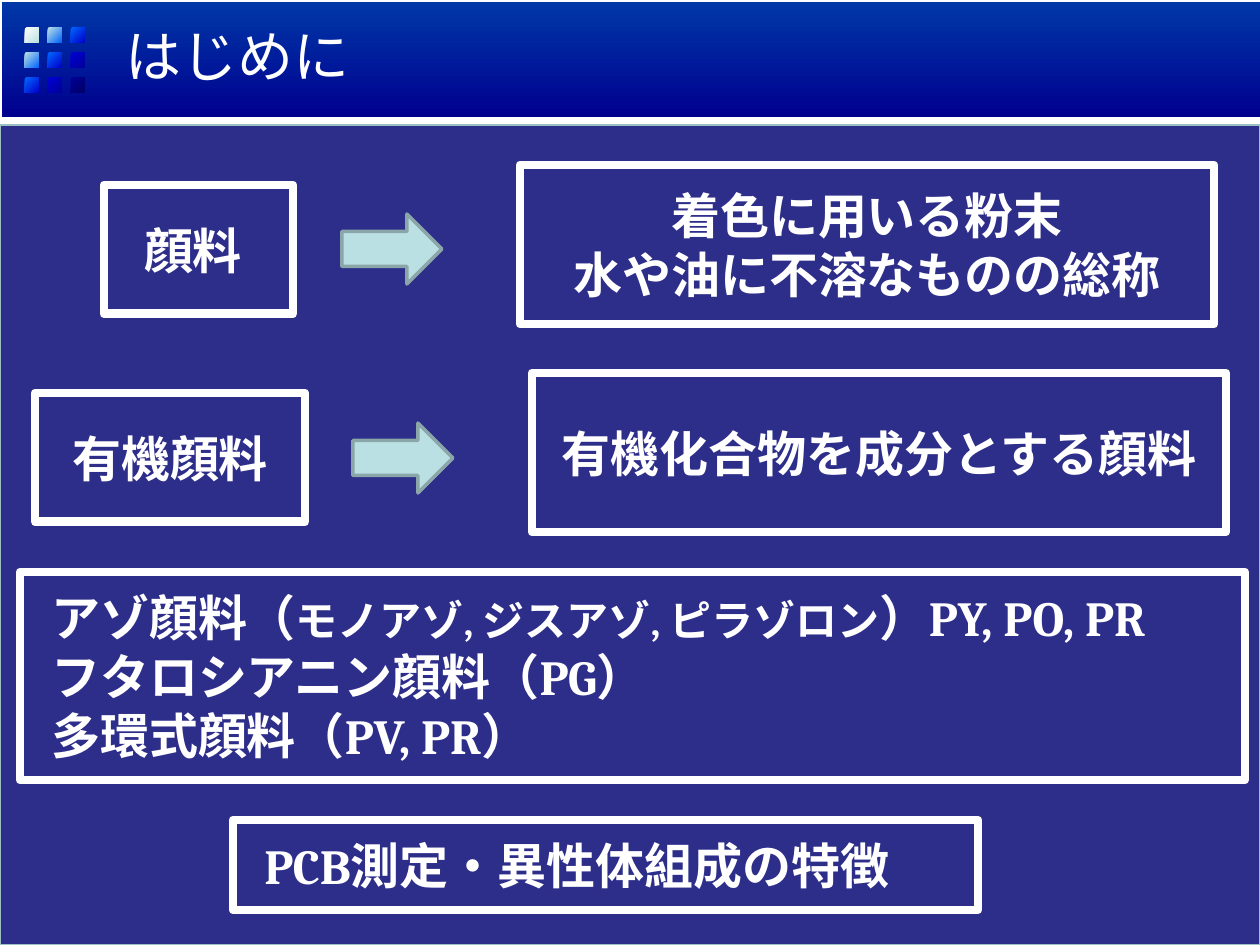
from dataclasses import dataclass
from itertools import pairwise, product

from pptx import Presentation
from pptx.dml.color import RGBColor
from pptx.enum.shapes import MSO_SHAPE as Preset
from pptx.enum.text import MSO_ANCHOR as Anchor, MSO_AUTO_SIZE as AutoSize, PP_ALIGN as Align
from pptx.shapes.autoshape import Shape
from pptx.slide import Slide
from pptx.util import Emu, Inches, Pt

EMU_PER_PX = 914400 / 126

WHITE = RGBColor(0xFF, 0xFF, 0xFF)
PALE_TEAL = RGBColor(0xBB, 0xE0, 0xE3)
PANEL_LINE = RGBColor(0x9B, 0xBF, 0xC2)
ARROW_LINE = RGBColor(0x8A, 0xA6, 0xA8)
PANEL_BLUE = RGBColor(0x2D, 0x2D, 0x8A)
HEADER_TOP = RGBColor(0x00, 0x38, 0xA8)
HEADER_BOTTOM = RGBColor(0x00, 0x00, 0x8E)
BRIGHT_BLUE = RGBColor(0x00, 0x66, 0xFF)
MEDIUM_BLUE = RGBColor(0x00, 0x00, 0xCC)
ROYAL_BLUE = RGBColor(0x00, 0x00, 0xD6)
DARK_BLUE = RGBColor(0x00, 0x00, 0x99)
NAVY = RGBColor(0x00, 0x00, 0x66)

# Gradient of each diagonal of the dot grid, from top left to bottom right
DIAGONAL_GRADIENTS = [
    (WHITE, PALE_TEAL),
    (PALE_TEAL, BRIGHT_BLUE),
    (BRIGHT_BLUE, MEDIUM_BLUE),
    (ROYAL_BLUE, DARK_BLUE),
    (DARK_BLUE, NAVY),
]


@dataclass(frozen=True)
class Area:
    left: int
    top: int
    width: int
    height: int


@dataclass(frozen=True)
class Run:
    text: str
    size: int = 28


@dataclass(frozen=True)
class TextBox:
    area: Area
    lines: list[list[Run]]
    is_list: bool = False


BOXES = [
    TextBox(Area(104, 185, 189, 129), [[Run("顔料 ")]]),
    TextBox(Area(520, 165, 694, 159), [[Run("着色に用いる粉末")], [Run("水や油に不溶なものの総称")]]),
    TextBox(Area(35, 393, 270, 129), [[Run("有機顔料")]]),
    TextBox(Area(532, 373, 694, 159), [[Run("有機化合物を成分とする顔料")]]),
    TextBox(
        Area(20, 572, 1225, 208),
        [
            [Run("アゾ顔料（"), Run("モノアゾ, ジスアゾ, ピラゾロン", 24), Run("）PY, PO, PR")],
            [Run("フタロシアニン顔料（PG）")],
            [Run("多環式顔料（PV, PR）")],
        ],
        is_list=True,
    ),
    TextBox(Area(233, 820, 745, 90), [[Run("PCB測定・異性体組成の特徴")]], is_list=True),
]
ARROWS = [Area(342, 214, 100, 70), Area(353, 423, 100, 70)]


def px(length: int) -> Emu:
    return Emu(round(length * EMU_PER_PX))


def place(shape: Shape, area: Area) -> None:
    shape.left, shape.top = px(area.left), px(area.top)
    shape.width, shape.height = px(area.width), px(area.height)


def add_preset(slide: Slide, preset: Preset, area: Area) -> Shape:
    shape = slide.shapes.add_shape(preset, 0, 0, 0, 0)
    place(shape, area)
    shape.shadow.inherit = False
    return shape


def add_gradient(slide: Slide, area: Area, colors: tuple[RGBColor, RGBColor], angle: int) -> None:
    """Add a borderless rectangle; the angle runs counter-clockwise."""
    shape = add_preset(slide, Preset.RECTANGLE, area)
    shape.line.fill.background()
    shape.fill.gradient()
    shape.fill.gradient_angle = angle
    for stop, color in zip(shape.fill.gradient_stops, colors):
        stop.color.rgb = color


def add_filled(slide: Slide, preset: Preset, area: Area,
               fill: RGBColor, line: RGBColor, line_width: float) -> None:
    shape = add_preset(slide, preset, area)
    shape.fill.solid()
    shape.fill.fore_color.rgb = fill
    shape.line.color.rgb = line
    shape.line.width = Pt(line_width)


def add_text_box(slide: Slide, box: TextBox) -> None:
    shape = add_preset(slide, Preset.RECTANGLE, box.area)
    shape.fill.background()
    shape.line.color.rgb = WHITE
    shape.line.width = Pt(5)
    frame = shape.text_frame
    frame.word_wrap = True
    frame.vertical_anchor = Anchor.MIDDLE
    for index, line in enumerate(box.lines):
        paragraph = frame.add_paragraph() if index else frame.paragraphs[0]
        paragraph.alignment = Align.JUSTIFY if box.is_list else Align.CENTER
        if box.is_list:
            properties = paragraph._p.get_or_add_pPr()
            properties.set("marL", "0")
            properties.set("indent", str(Inches(0.15)))
        paragraph.font.name = "Cambria"
        paragraph.font.bold = True
        paragraph.font.color.rgb = WHITE
        for part in line:
            run = paragraph.add_run()
            run.text = part.text
            run.font.size = Pt(part.size)


def add_header(slide: Slide) -> None:
    add_gradient(slide, Area(2, 2, 1258, 115), (HEADER_TOP, HEADER_BOTTOM), 270)
    for row, column in product(range(3), repeat=2):
        area = Area(25 + 23 * column, 28 + 25 * row, 14, 15)
        add_gradient(slide, area, DIAGONAL_GRADIENTS[row + column], 315)

    title = slide.shapes.title
    place(title, Area(113, 16, 1111, 79))
    slide.shapes._spTree.append(title._element)  # bring in front of the header
    frame = title.text_frame
    frame.text = "はじめに"
    frame.auto_size = AutoSize.NONE
    frame.vertical_anchor = Anchor.MIDDLE
    paragraph = frame.paragraphs[0]
    paragraph.alignment = Align.LEFT
    paragraph.font.name = "Arial"
    paragraph.font.size = Pt(32)
    paragraph.font.color.rgb = WHITE


def main() -> None:
    presentation = Presentation()
    presentation.slide_width = Inches(10)
    presentation.slide_height = Inches(7.5)
    slide = presentation.slides.add_slide(presentation.slide_layouts[5])

    add_header(slide)
    add_filled(slide, Preset.RECTANGLE, Area(0, 125, 1260, 820), PANEL_BLUE, PANEL_LINE, 1.5)
    for box in BOXES:
        add_text_box(slide, box)
    for area in ARROWS:
        add_filled(slide, Preset.RIGHT_ARROW, area, PALE_TEAL, ARROW_LINE, 2)

    presentation.save("out.pptx")


if __name__ == "__main__":
    main()
